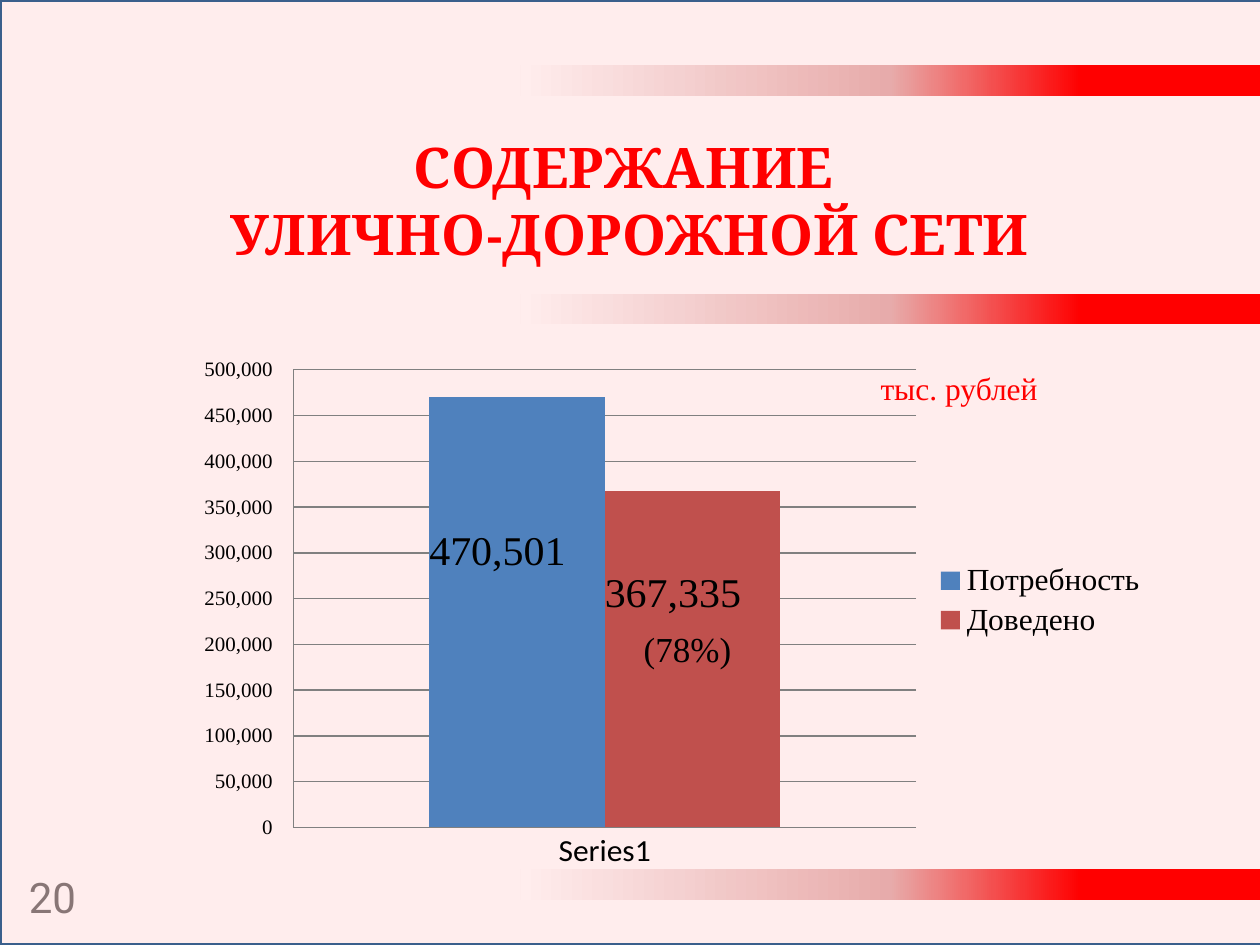
from dataclasses import dataclass

from lxml.etree import SubElement
from pptx import Presentation
from pptx.chart.data import CategoryChartData
from pptx.dml.color import RGBColor
from pptx.enum.chart import XL_CHART_TYPE, XL_LABEL_POSITION, XL_LEGEND_POSITION, XL_TICK_MARK
from pptx.enum.shapes import MSO_SHAPE
from pptx.enum.text import MSO_AUTO_SIZE, PP_ALIGN
from pptx.oxml.ns import qn
from pptx.slide import Slide
from pptx.util import Inches, Pt


@dataclass(frozen=True)
class Theme:
    red: str = "FF0000"
    pink: str = "E6B9B8"
    white: str = "FFFFFF"
    black: str = "000000"
    gray: str = "808080"
    frame: str = "3A5F8C"
    serif: str = "Times New Roman"
    sans: str = "Calibri"
    title_font: str = "Cambria"
    number_font: str = "Roboto"
    title_size: int = 32
    large: int = 24
    medium: int = 20
    body: int = 18
    small: int = 12


@dataclass(frozen=True)
class TextItem:
    box: tuple[float, float, float, float]
    lines: tuple[str, ...]
    font: str
    size: int
    color: str
    bold: bool = False
    centered: bool = False
    wrap: bool = True


@dataclass(frozen=True)
class Column:
    name: str
    value: int
    color: str
    label_shift: tuple[float, float]


THEME = Theme()
BAND_TOPS = (6.9, 2.33, 0.52)
BAND_STOPS = ((24, THEME.red), (50, THEME.pink), (100, THEME.white))
PAGE_NUMBER = TextItem((0.13, 6.87, 0.62, 0.5), ("20",), THEME.number_font, THEME.large, THEME.gray)
TITLE = TextItem((0, 1, 10, 1.18), ("СОДЕРЖАНИЕ ", "УЛИЧНО-ДОРОЖНОЙ СЕТИ"), THEME.title_font,
                 THEME.title_size, THEME.red, bold=True, centered=True)
CHART_NOTES = (
    TextItem((6.89, 2.88, 1.46, 0.4), ("тыс. рублей",), THEME.serif, THEME.body, THEME.red, wrap=False),
    TextItem((5.01, 4.93, 0.9, 0.44), ("(78%)",), THEME.serif, THEME.medium, THEME.black, wrap=False),
)
COLUMNS = (
    Column("Потребность", 470501, "4F81BD", (-0.02, -0.12)),
    Column("Доведено", 367335, "C0504D", (-0.02, -0.13)),
)


def rgb(color: str) -> RGBColor:
    return RGBColor.from_string(color)


def style_font(font, name: str, size: int, color: str) -> None:
    font.name = name
    font.size = Pt(size)
    font.color.rgb = rgb(color)


def add_rectangle(slide: Slide, left: float, top: float, width: float, height: float):
    shape = slide.shapes.add_shape(MSO_SHAPE.RECTANGLE, Inches(left), Inches(top),
                                   Inches(width), Inches(height))
    shape.shadow.inherit = False
    return shape


def add_band(slide: Slide, top: float) -> None:
    shape = add_rectangle(slide, 4.13, top, 5.87, 0.24)
    shape.line.fill.background()
    shape.fill.gradient()
    shape.fill.gradient_angle = 180
    stops = shape._element.spPr.find(".//" + qn("a:gsLst"))
    for stop in list(stops):
        stops.remove(stop)
    for position, color in BAND_STOPS:
        stop = SubElement(stops, qn("a:gs"), pos=str(position * 1000))
        SubElement(stop, qn("a:srgbClr"), val=color)


def add_tint(slide: Slide) -> None:
    shape = add_rectangle(slide, 0, 0, 10.02, 7.5)
    shape.fill.solid()
    shape.fill.fore_color.rgb = rgb(THEME.red)
    color = shape._element.spPr.find(qn("a:solidFill")).find(qn("a:srgbClr"))
    SubElement(color, qn("a:alpha"), val="7000")
    shape.line.color.rgb = rgb(THEME.frame)
    shape.line.width = Pt(2)


def add_text(slide: Slide, item: TextItem) -> None:
    text_frame = slide.shapes.add_textbox(*map(Inches, item.box)).text_frame
    text_frame.word_wrap = item.wrap
    text_frame.auto_size = MSO_AUTO_SIZE.SHAPE_TO_FIT_TEXT
    text_frame.text = "\n".join(item.lines)
    for paragraph in text_frame.paragraphs:
        if item.centered:
            paragraph.alignment = PP_ALIGN.CENTER
        for run in paragraph.runs:
            style_font(run.font, item.font, item.size, item.color)
            run.font.bold = item.bold


def set_layout(layout, **settings) -> None:
    manual = SubElement(layout, qn("c:manualLayout"))
    for name, value in settings.items():
        SubElement(manual, qn("c:" + name), val=str(value))


def style_series(series, column: Column) -> None:
    series.format.fill.solid()
    series.format.fill.fore_color.rgb = rgb(column.color)
    series.invert_if_negative = False
    label = series.points[0].data_label
    style_font(label.font, THEME.serif, THEME.large, THEME.black)
    label.position = XL_LABEL_POSITION.CENTER
    # Shift the value label from the middle of its column, without a leader line
    labels = series._element.find(qn("c:dLbls"))
    index = labels.find(qn("c:dLbl")).find(qn("c:idx"))
    layout = index.makeelement(qn("c:layout"))
    index.addnext(layout)
    set_layout(layout, x=column.label_shift[0], y=column.label_shift[1])
    leader_lines = labels.find(qn("c:showLeaderLines"))
    if leader_lines is None:
        leader_lines = SubElement(labels, qn("c:showLeaderLines"))
    leader_lines.set("val", "0")


def add_column_chart(slide: Slide) -> None:
    data = CategoryChartData(number_format="#,##0")
    data.categories = ["Series1"]
    for column in COLUMNS:
        data.add_series(column.name, [column.value])
    chart = slide.shapes.add_chart(XL_CHART_TYPE.COLUMN_CLUSTERED, Inches(1.46), Inches(2.75),
                                   Inches(7.75), Inches(4.15), data).chart
    chart.has_title = False
    style_font(chart.font, THEME.sans, THEME.body, THEME.black)

    # Plot and columns
    plot = chart.plots[0]
    plot.gap_width = 155
    plot.vary_by_categories = False
    for series, column in zip(plot.series, COLUMNS):
        style_series(series, column)
    plot_area = chart._chartSpace.chart.plotArea
    layout = plot_area.find(qn("c:layout"))
    if layout is None:
        layout = plot_area.makeelement(qn("c:layout"))
        plot_area.insert(0, layout)
    set_layout(layout, layoutTarget="inner", xMode="edge", yMode="edge",
               x=0.112, y=0.046, w=0.638, h=0.901)

    # Axes
    for axis in (chart.category_axis, chart.value_axis):
        axis.major_tick_mark = XL_TICK_MARK.NONE
        axis.format.line.color.rgb = rgb(THEME.gray)
    axis = chart.value_axis
    axis.minimum_scale, axis.maximum_scale, axis.major_unit = 0, 500000, 50000
    axis.has_major_gridlines = True
    axis.major_gridlines.format.line.color.rgb = rgb(THEME.gray)
    axis.tick_labels.number_format = "#,##0_р_."
    axis.tick_labels.number_format_is_linked = False
    style_font(axis.tick_labels.font, THEME.serif, THEME.small, THEME.black)

    # Legend
    chart.has_legend = True
    chart.legend.position = XL_LEGEND_POSITION.RIGHT
    chart.legend.include_in_layout = False
    style_font(chart.legend.font, THEME.serif, THEME.body, THEME.black)


def main() -> None:
    presentation = Presentation()
    presentation.slide_width, presentation.slide_height = Inches(10), Inches(7.5)
    slide = presentation.slides.add_slide(presentation.slide_layouts[6])
    # Background bands, page number and red tint
    for top in BAND_TOPS:
        add_band(slide, top)
    add_text(slide, PAGE_NUMBER)
    add_tint(slide)
    # Title, chart and its notes
    add_text(slide, TITLE)
    add_column_chart(slide)
    for note in CHART_NOTES:
        add_text(slide, note)
    presentation.save("out.pptx")


if __name__ == "__main__":
    main()
